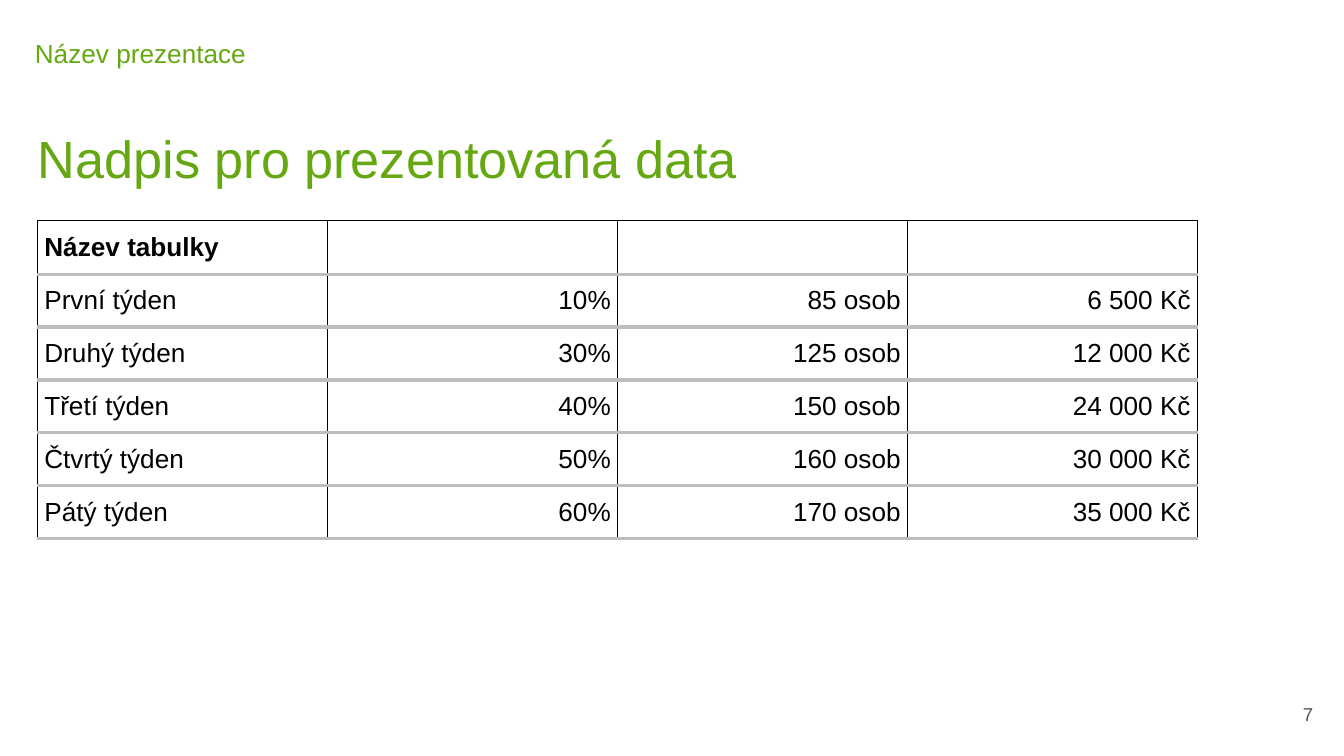
from lxml import etree
from pptx import Presentation
from pptx import util as u
from pptx.dml.color import RGBColor
from pptx.enum import text
from pptx.oxml import ns

GREEN, BLACK, GREY, SILVER, WHITE = "65A812", "000000", "585858", "BCBEC0", "FFFFFF"
WEEKS = [
    ("Název tabulky", "", "", ""),
    ("První týden", "10%", "85 osob", "6 500 Kč"),
    ("Druhý týden", "30%", "125 osob", "12 000 Kč"),
    ("Třetí týden", "40%", "150 osob", "24 000 Kč"),
    ("Čtvrtý týden", "50%", "160 osob", "30 000 Kč"),
    ("Pátý týden", "60%", "170 osob", "35 000 Kč"),
]


def colour(value):
    """Return a colour from its hex string."""
    return RGBColor.from_string(value)


def set_margins(target, left, top, right, bottom):
    """Set the inner margins of a text frame or a cell."""
    target.margin_left, target.margin_top = u.Inches(left), u.Inches(top)
    target.margin_right, target.margin_bottom = u.Inches(right), u.Inches(bottom)


def add_run(paragraph, words, size, shade, bold=False):
    """Add one Arial run to a paragraph."""
    run = paragraph.add_run()
    run.text = words
    run.font.name, run.font.size, run.font.bold = "Arial", u.Pt(size), bold
    run.font.color.rgb = colour(shade)


def add_line(slide, box, words, size, shade, margins, wrap=True):
    """Place a one-line text box and return its frame."""
    frame = slide.shapes.add_textbox(*map(u.Inches, box)).text_frame
    frame.word_wrap = wrap
    set_margins(frame, *margins)
    add_run(frame.paragraphs[0], words, size, shade)
    return frame


def add_heading(slide, box):
    """Place the slide heading."""
    add_line(slide, box, "Nadpis pro prezentovaná data", 28, GREEN, (0, 0.1, 0.1, 0.1))


def add_presentation_name(slide, box):
    """Place the presentation name with its hanging indent."""
    frame = add_line(slide, box, "Název prezentace", 14, GREEN, (0, 0, 0.1, 0.1))
    properties = frame.paragraphs[0]._p.get_or_add_pPr()
    properties.set("marL", str(u.Inches(0.38)))
    properties.set("indent", str(u.Inches(-0.25)))


def add_page_number(slide, box):
    """Place the page number at the right of its box."""
    frame = add_line(slide, box, "7", 10, GREY, (0.1,) * 4, wrap=False)
    frame.vertical_anchor = text.MSO_ANCHOR.MIDDLE
    frame.paragraphs[0].alignment = text.PP_ALIGN.RIGHT


def set_border(cell, side, shade, width):
    """Draw one side of a cell."""
    line = etree.SubElement(cell._tc.get_or_add_tcPr(), ns.qn(f"a:ln{side}"), w=str(u.Pt(width)))
    fill = etree.SubElement(line, ns.qn("a:solidFill"))
    etree.SubElement(fill, ns.qn("a:srgbClr"), val=shade)


def fill_cell(cell, words, heading, first):
    """Style a cell and write its words."""
    cell.vertical_anchor = text.MSO_ANCHOR.MIDDLE
    set_margins(cell, *(0.05,) * 4)
    set_border(cell, "L", BLACK, 0.5)
    set_border(cell, "R", BLACK, 0.5)
    set_border(cell, "T", *((BLACK, 0.5) if heading else (SILVER, 2)))
    set_border(cell, "B", SILVER, 2)
    cell.fill.solid()
    cell.fill.fore_color.rgb = colour(WHITE)
    if words:
        paragraph = cell.text_frame.paragraphs[0]
        paragraph.alignment = text.PP_ALIGN.LEFT if first else text.PP_ALIGN.RIGHT
        add_run(paragraph, words, 14, BLACK, heading)


def add_weeks(slide, box):
    """Place the table of weeks in equal rows and columns."""
    table = slide.shapes.add_table(len(WEEKS), len(WEEKS[0]), *map(u.Inches, box)).table
    table.first_row = table.horz_banding = False
    for r, week in enumerate(WEEKS):
        for c, words in enumerate(week):
            fill_cell(table.cell(r, c), words, r == 0, c == 0)


def main():
    """Build and save the slide."""
    deck = Presentation()
    deck.slide_width = u.Inches(10)
    deck.slide_height = deck.slide_width * 9 // 16
    slide = deck.slides.add_slide(deck.slide_layouts[6])
    add_page_number(slide, (9.5, 5.14, 0.37, 0.35))
    add_heading(slide, (0.28, 0.84, 8.27, 0.63))
    add_presentation_name(slide, (0.13, 0.28, 8.27, 0.39))
    add_weeks(slide, (0.28, 1.64, 8.63, 2.36))
    deck.save("out.pptx")


if __name__ == "__main__":
    main()
